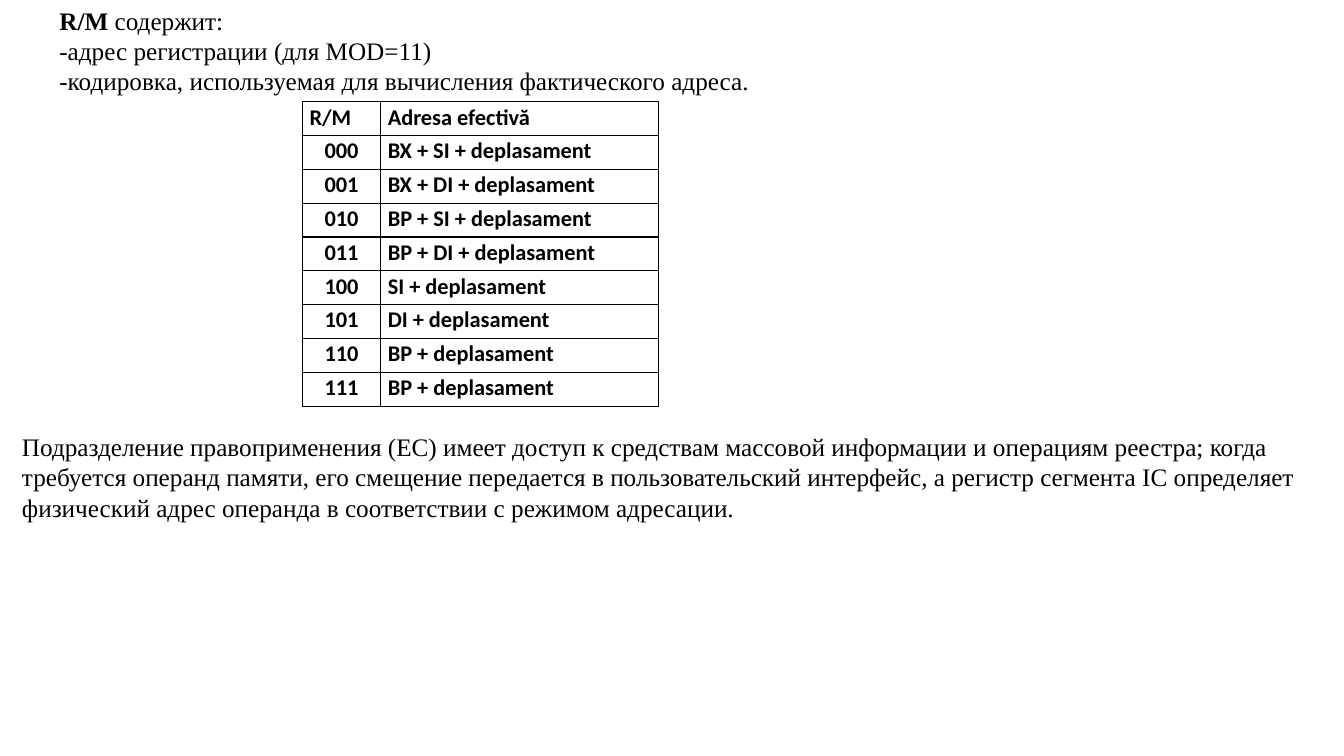
from dataclasses import dataclass

from lxml.etree import SubElement
from pptx import Presentation
from pptx.dml.color import RGBColor
from pptx.enum.text import MSO_AUTO_SIZE, PP_ALIGN as Align
from pptx.oxml.ns import qn
from pptx.util import Inches, Pt


@dataclass(frozen=True)
class Theme:
    ink: str = "000000"
    body_font: str = "Times New Roman"
    body_size: int = 18
    table_font: str = "Calibri"
    table_size: int = 16
    border: float = 1


THEME = Theme()
WIDTH, HEIGHT = 13.33, 7.5

INTRO = [
    [("R/М ", True), ("содержит:", False)],
    [("-адрес регистрации (для MOD=11)", False)],
    [("-кодировка, используемая для вычисления фактического адреса.", False)],
]
SUMMARY = [[(
    "Подразделение правоприменения (ЕС) имеет доступ к средствам массовой "
    "информации и операциям реестра; когда требуется операнд памяти, его "
    "смещение передается в пользовательский интерфейс, а регистр сегмента IC "
    "определяет физический адрес операнда в соответствии с режимом адресации.",
    False,
)]]
HEADER = ("R/M", "Adresa efectivă")
BASES = ["BX + SI", "BX + DI", "BP + SI", "BP + DI", "SI", "DI", "BP", "BP"]


def set_font(font, name, size):
    font.name = name
    font.size = Pt(size)
    font.color.rgb = RGBColor.from_string(THEME.ink)


def add_text(slide, box, paragraphs, align=Align.LEFT, indent=0):
    tf = slide.shapes.add_textbox(*map(Inches, box)).text_frame
    tf.word_wrap = True
    tf.auto_size = MSO_AUTO_SIZE.SHAPE_TO_FIT_TEXT
    for i, runs in enumerate(paragraphs):
        p = tf.add_paragraph() if i else tf.paragraphs[0]
        p.alignment = align
        p._p.get_or_add_pPr().set("indent", str(Inches(indent)))
        for text, bold in runs:
            r = p.add_run()
            r.text = text
            r.font.bold = bold
            set_font(r.font, THEME.body_font, THEME.body_size)


def add_borders(cell):
    tc_pr = cell._tc.get_or_add_tcPr()
    for side in ("a:lnL", "a:lnR", "a:lnT", "a:lnB"):
        ln = SubElement(tc_pr, qn(side), w=str(Pt(THEME.border)))
        fill = SubElement(ln, qn("a:solidFill"))
        SubElement(fill, qn("a:srgbClr"), val=THEME.ink)


def fill_cell(cell, text, align):
    cell.margin_left = cell.margin_right = Inches(0.07)
    cell.margin_top = cell.margin_bottom = 0
    add_borders(cell)
    cell.fill.background()
    p = cell.text_frame.paragraphs[0]
    p.text = text
    p.alignment = align
    p.line_spacing = 1.07
    p.font.bold = True
    set_font(p.font, THEME.table_font, THEME.table_size)


def add_address_table(slide, box, code_share):
    rows = [HEADER] + [
        (f"{code:03b}", f"{base} + deplasament") for code, base in enumerate(BASES)
    ]
    _, _, width, height = box
    frame = slide.shapes.add_table(len(rows), len(HEADER), *map(Inches, box))
    table = frame.table
    for column, share in zip(table.columns, (code_share, 1 - code_share)):
        column.width = Inches(width * share)
    for i, values in enumerate(rows):
        table.rows[i].height = Inches(height / len(rows))
        for j, text in enumerate(values):
            align = Align.CENTER if i and j == 0 else Align.JUSTIFY
            fill_cell(table.cell(i, j), text, align)


def main():
    prs = Presentation()
    prs.slide_width, prs.slide_height = Inches(WIDTH), Inches(HEIGHT)
    slide = prs.slides.add_slide(prs.slide_layouts[6])
    text_height = 1.01
    add_text(slide, (0, 0, 12.35, text_height), INTRO, Align.JUSTIFY, indent=0.49)
    add_address_table(slide, (3, text_height, 3.53, 3.02), code_share=0.22)
    add_text(slide, (0.12, 4.23, 13.07, text_height), SUMMARY)
    prs.save("out.pptx")


if __name__ == "__main__":
    main()
